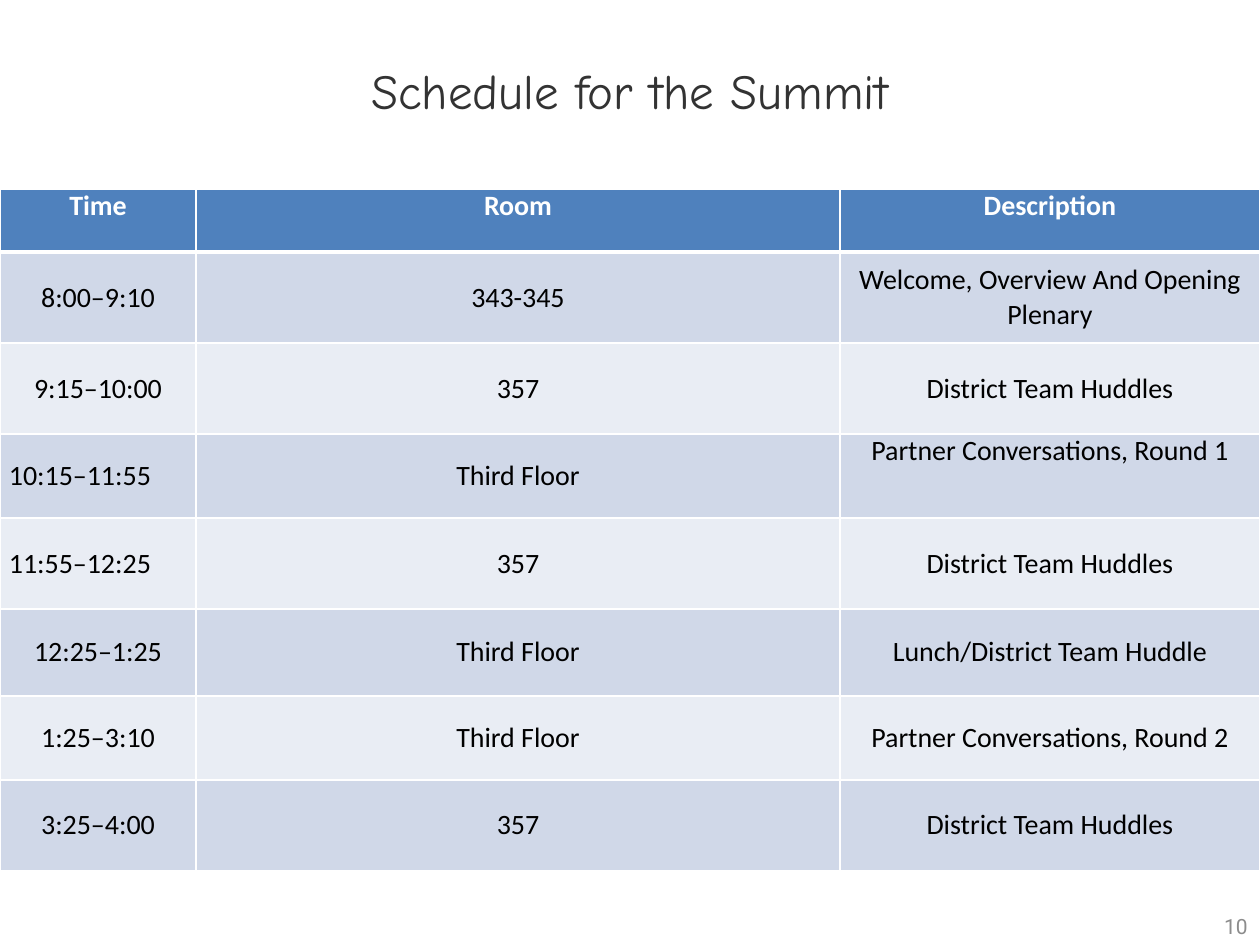
import pptx
import pptx.dml.color
import pptx.enum.text
import pptx.oxml
import pptx.oxml.ns
import pptx.util

RGBColor = pptx.dml.color.RGBColor
ALIGN = pptx.enum.text.PP_ALIGN
ANCHOR = pptx.enum.text.MSO_ANCHOR

WHITE = RGBColor(0xFF, 0xFF, 0xFF)
BLACK = RGBColor(0x00, 0x00, 0x00)
CHARCOAL = RGBColor(0x33, 0x33, 0x33)
GREY = RGBColor(0x8C, 0x8C, 0x8C)
HEADER_BLUE = RGBColor(0x4F, 0x81, 0xBD)
BANDS = (RGBColor(0xD0, 0xD8, 0xE8), RGBColor(0xE9, 0xED, 0xF4))

SLIDE_WIDTH, SLIDE_HEIGHT = 1260, 945
COLUMN_WIDTHS = (196, 644, 420)
ROW_HEIGHTS = (63, 91, 91, 84, 91, 87, 84, 91)

SCHEDULE = (
    ("Time", "Room", "Description"),
    ("8:00–9:10", "343-345", "Welcome, Overview And Opening Plenary"),
    ("9:15–10:00", "357", "District Team Huddles"),
    ("10:15–11:55", "Third Floor", "Partner Conversations, Round 1"),
    ("11:55–12:25", "357", "District Team Huddles"),
    ("12:25–1:25", "Third Floor", "Lunch/District Team Huddle"),
    ("1:25–3:10", "Third Floor", "Partner Conversations, Round 2"),
    ("3:25–4:00", "357", "District Team Huddles"),
)
LEFT_ALIGNED = {(3, 0), (4, 0)}
TOP_ANCHORED = {(0, 0), (0, 1), (0, 2), (3, 2)}


def px(length):
    return pptx.util.Emu(round(length * 914400 / 126))


class SlideBuilder:
    title_font = "Comic Neue"
    table_font = "Calibri"
    number_font = "Roboto"

    def __init__(self, presentation):
        self.slide = presentation.slides.add_slide(presentation.slide_layouts[5])

    def set_text(self, frame, text, font, size, color, align, bold=False):
        frame.text = text
        paragraph = frame.paragraphs[0]
        paragraph.alignment = align
        paragraph.font.name = font
        paragraph.font.size = pptx.util.Pt(size)
        paragraph.font.color.rgb = color
        paragraph.font.bold = bold

    def title(self, text, left, top, width, height):
        heading = self.slide.shapes.title
        heading.left, heading.top = px(left), px(top)
        heading.width, heading.height = px(width), px(height)
        heading.text_frame.vertical_anchor = ANCHOR.MIDDLE
        self.set_text(heading.text_frame, text, self.title_font, 28, CHARCOAL, ALIGN.CENTER)

    def page_number(self, text, left, top, width, height):
        box = self.slide.shapes.add_textbox(px(left), px(top), px(width), px(height))
        box.text_frame.word_wrap = True
        box.text_frame.vertical_anchor = ANCHOR.MIDDLE
        self.set_text(box.text_frame, text, self.number_font, 12, GREY, ALIGN.RIGHT)

    def borders(self, cell, top, bottom):
        properties = cell._tc.get_or_add_tcPr()
        for side, points in (("L", 1), ("R", 1), ("T", top), ("B", bottom)):
            properties.append(pptx.oxml.parse_xml(
                f'<a:ln{side} {pptx.oxml.ns.nsdecls("a")} w="{pptx.util.Pt(points)}">'
                f'<a:solidFill><a:srgbClr val="{WHITE}"/></a:solidFill></a:ln{side}>'
            ))

    def cell(self, cell, text, row, column):
        header = row == 0
        cell.margin_left = cell.margin_right = px(9)
        cell.margin_top = cell.margin_bottom = 0
        place = (row, column)
        cell.vertical_anchor = ANCHOR.TOP if place in TOP_ANCHORED else ANCHOR.MIDDLE
        self.borders(cell, top=3 if row == 1 else 1, bottom=3 if header else 1)
        cell.fill.solid()
        cell.fill.fore_color.rgb = HEADER_BLUE if header else BANDS[(row - 1) % 2]
        align = ALIGN.LEFT if place in LEFT_ALIGNED else ALIGN.CENTER
        color = WHITE if header else BLACK
        self.set_text(cell.text_frame, text, self.table_font, 16, color, align, header)

    def table(self, rows, left, top):
        table = self.slide.shapes.add_table(
            len(rows), len(COLUMN_WIDTHS), px(left), px(top),
            px(sum(COLUMN_WIDTHS)), px(sum(ROW_HEIGHTS)),
        ).table
        for column, width in zip(table.columns, COLUMN_WIDTHS):
            column.width = px(width)
        for row, height in zip(table.rows, ROW_HEIGHTS):
            row.height = px(height)
        for row, entries in enumerate(rows):
            for column, text in enumerate(entries):
                self.cell(table.cell(row, column), text, row, column)


def main():
    presentation = pptx.Presentation()
    presentation.slide_width = px(SLIDE_WIDTH)
    presentation.slide_height = px(SLIDE_HEIGHT)
    summit = SlideBuilder(presentation)
    summit.title("Schedule for the Summit", 0, 0, SLIDE_WIDTH, 179)
    summit.table(SCHEDULE, 0, 189)
    summit.page_number("10", 966, 903, 294, 47)
    presentation.save("out.pptx")


if __name__ == "__main__":
    main()
